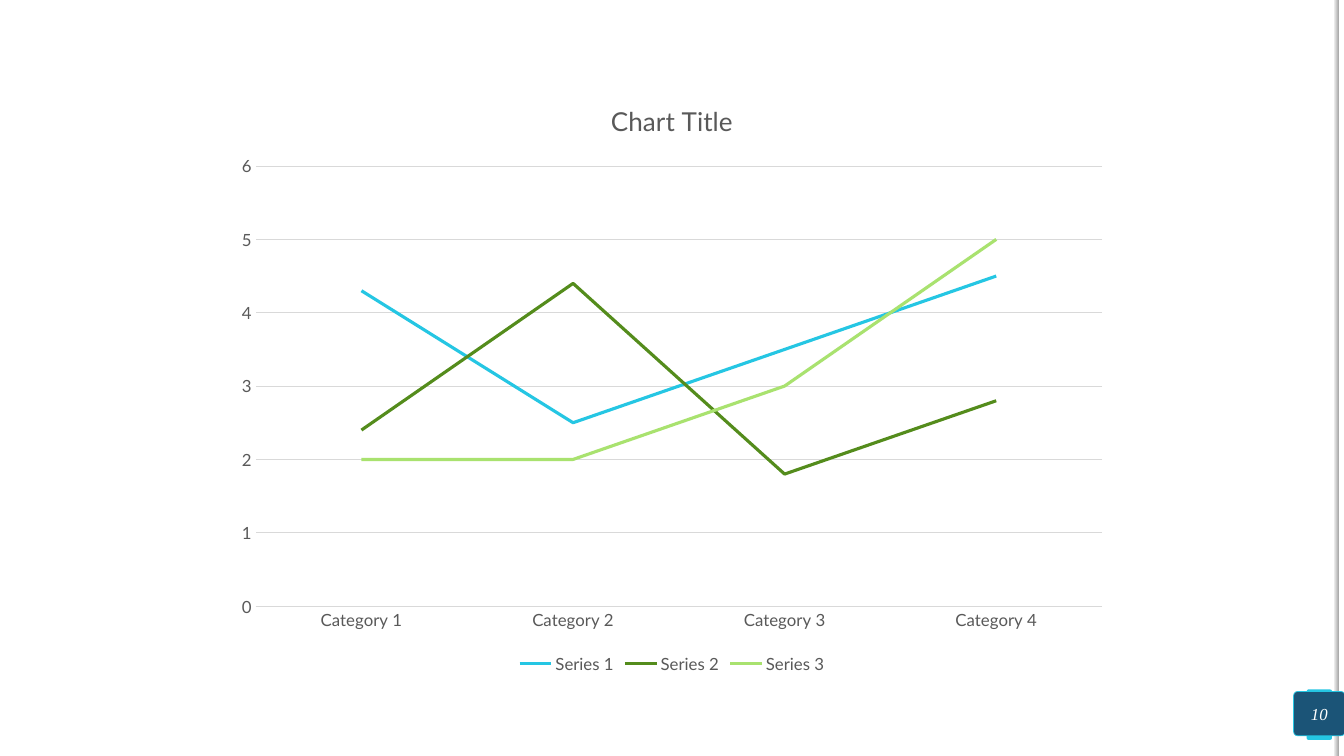
import pptx
import pptx.chart.data
import pptx.dml.color
import pptx.enum.chart
import pptx.enum.shapes
import pptx.enum.text
import pptx.util

RGB = pptx.dml.color.RGBColor
Inches = pptx.util.Inches
Pt = pptx.util.Pt
SHAPE = pptx.enum.shapes.MSO_SHAPE
CHART = pptx.enum.chart

WHITE = RGB(0xFF, 0xFF, 0xFF)
CYAN = RGB(0x25, 0xC6, 0xE3)
NAVY = RGB(0x1B, 0x54, 0x77)
GREEN = RGB(0x54, 0x8C, 0x1C)
LIME = RGB(0xA9, 0xE2, 0x6F)
GREY = RGB(0x59, 0x59, 0x59)
RULE = RGB(0xD9, 0xD9, 0xD9)
SHADE_LIGHT = RGB(0xF2, 0xF2, 0xF2)
SHADE_DARK = RGB(0xA6, 0xA6, 0xA6)

TITLE = "Chart Title"
CATEGORIES = ["Category 1", "Category 2", "Category 3", "Category 4"]
SERIES = [
    ("Series 1", (4.3, 2.5, 3.5, 4.5), CYAN),
    ("Series 2", (2.4, 4.4, 1.8, 2.8), GREEN),
    ("Series 3", (2, 2, 3, 5), LIME),
]
PAGE_NUMBER = "10"

WIDTH, HEIGHT = 13.33, 7.5
EDGE = 0.05
BADGE_W, BADGE_H = 0.51, 0.44
TAB_W, TAB_H = 0.25, 0.5
BADGE_TOP = 6.86
CHART_W, CHART_H = WIDTH * 2 / 3, 5.93
CHART_TOP = 0.79


def set_font(font, size=12, color=GREY, name="Lato", italic=False):
    font.size = Pt(size)
    font.name = name
    font.bold = False
    font.italic = italic
    font.color.rgb = color


def write(tf, text, **style):
    p = tf.paragraphs[0]
    p.alignment = pptx.enum.text.PP_ALIGN.CENTER
    r = p.add_run()
    r.text = text
    set_font(r.font, **style)


def add_box(s, kind, left, top, width, height, fill=None, line=None, radius=None):
    sp = s.shapes.add_shape(kind, Inches(left), Inches(top), Inches(width), Inches(height))
    sp.shadow.inherit = False
    if radius is not None:
        sp.adjustments[0] = radius
    if fill is not None:
        sp.fill.solid()
        sp.fill.fore_color.rgb = fill
    if line is None:
        sp.line.fill.background()
    else:
        sp.line.color.rgb = line
        sp.line.width = Pt(0.5)
    return sp


def add_edge_and_badge(s):
    left = WIDTH - BADGE_W + 0.01
    add_box(s, SHAPE.ROUNDED_RECTANGLE, left + (BADGE_W - TAB_W) / 2,
            BADGE_TOP + (BADGE_H - TAB_H) / 2 + 0.01, TAB_W, TAB_H, fill=CYAN, radius=0.074)
    add_box(s, SHAPE.RECTANGLE, WIDTH - EDGE, 0, EDGE, HEIGHT, fill=WHITE)
    shade = add_box(s, SHAPE.RECTANGLE, WIDTH - 2 * EDGE, 0, EDGE, HEIGHT)
    shade.fill.gradient()
    shade.fill.gradient_angle = 0
    for stop, color in zip(shade.fill.gradient_stops, (SHADE_LIGHT, SHADE_DARK)):
        stop.color.rgb = color
    badge = add_box(s, SHAPE.ROUNDED_RECTANGLE, left, BADGE_TOP, BADGE_W, BADGE_H,
                    fill=NAVY, line=CYAN, radius=0.095)
    tf = badge.text_frame
    tf.margin_left = tf.margin_right = tf.margin_top = tf.margin_bottom = 0
    tf.vertical_anchor = pptx.enum.text.MSO_ANCHOR.MIDDLE
    write(tf, PAGE_NUMBER, color=WHITE, name="Times New Roman", italic=True)


def add_line_chart(s):
    data = pptx.chart.data.CategoryChartData()
    data.categories = CATEGORIES
    for name, values, color in SERIES:
        data.add_series(name, values)
    chart = s.shapes.add_chart(
        CHART.XL_CHART_TYPE.LINE, Inches((WIDTH - CHART_W) / 2), Inches(CHART_TOP),
        Inches(CHART_W), Inches(CHART_H), data).chart
    set_font(chart.font)
    chart.has_title = True
    write(chart.chart_title.text_frame, TITLE, size=18.6)
    chart.chart_title.include_in_layout = False
    chart.has_legend = True
    chart.legend.position = CHART.XL_LEGEND_POSITION.BOTTOM
    chart.legend.include_in_layout = False
    set_font(chart.legend.font)
    plot = chart.plots[0]
    plot.vary_by_categories = False
    for line, (name, values, color) in zip(plot.series, SERIES):
        line.smooth = False
        line.marker.style = CHART.XL_MARKER_STYLE.NONE
        line.format.line.color.rgb = color
        line.format.line.width = Pt(2.25)
    for axis in (chart.category_axis, chart.value_axis):
        axis.major_tick_mark = axis.minor_tick_mark = CHART.XL_TICK_MARK.NONE
        set_font(axis.tick_labels.font)
    chart.value_axis.minimum_scale = 0
    chart.value_axis.maximum_scale = 6
    chart.value_axis.major_unit = 1
    chart.value_axis.format.line.fill.background()
    for rule in (chart.category_axis.format.line, chart.value_axis.major_gridlines.format.line):
        rule.color.rgb = RULE
        rule.width = Pt(0.75)


def main():
    prs = pptx.Presentation()
    prs.slide_width, prs.slide_height = Inches(WIDTH), Inches(HEIGHT)
    s = prs.slides.add_slide(prs.slide_layouts[6])
    add_edge_and_badge(s)
    add_line_chart(s)
    prs.save("out.pptx")


if __name__ == "__main__":
    main()
